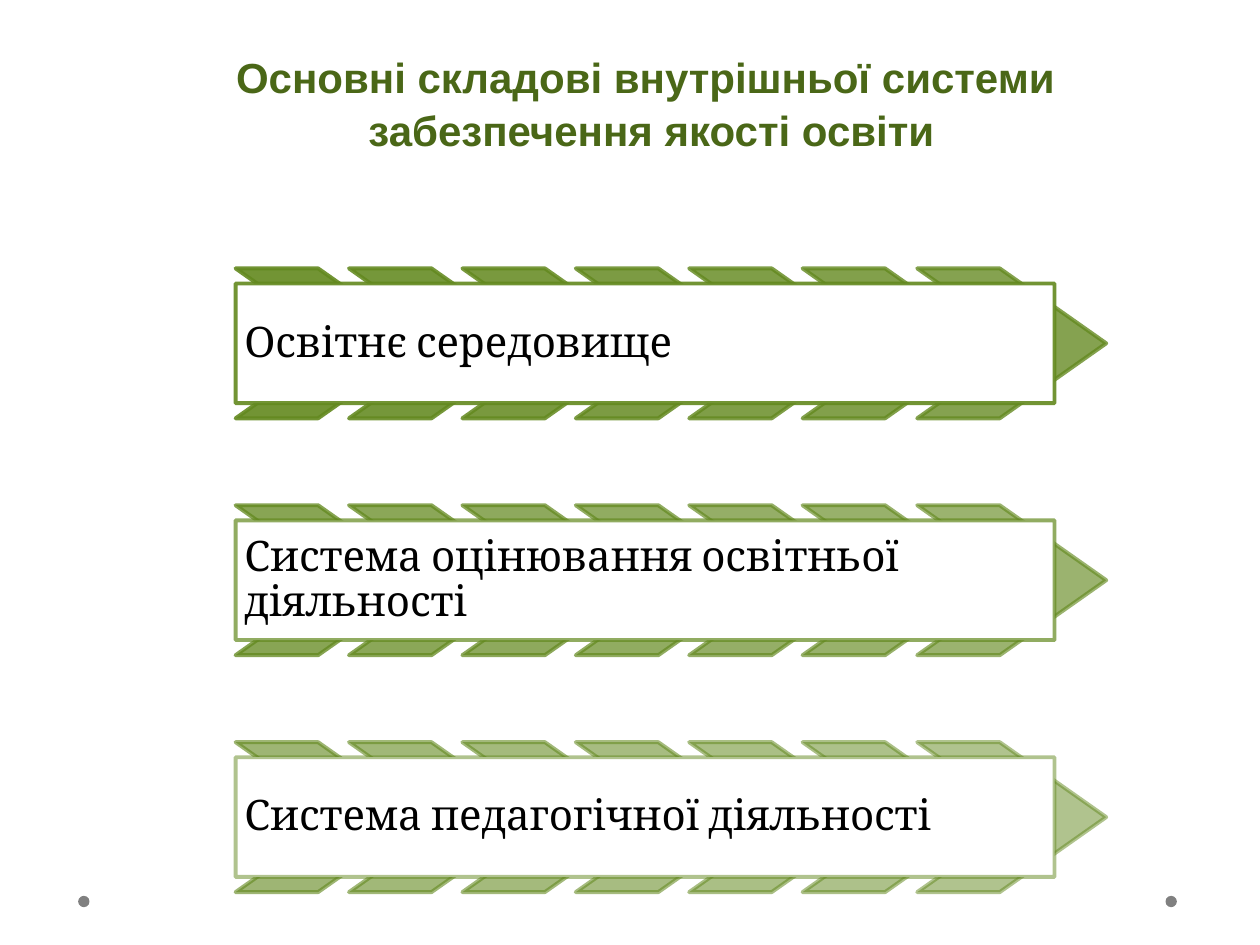
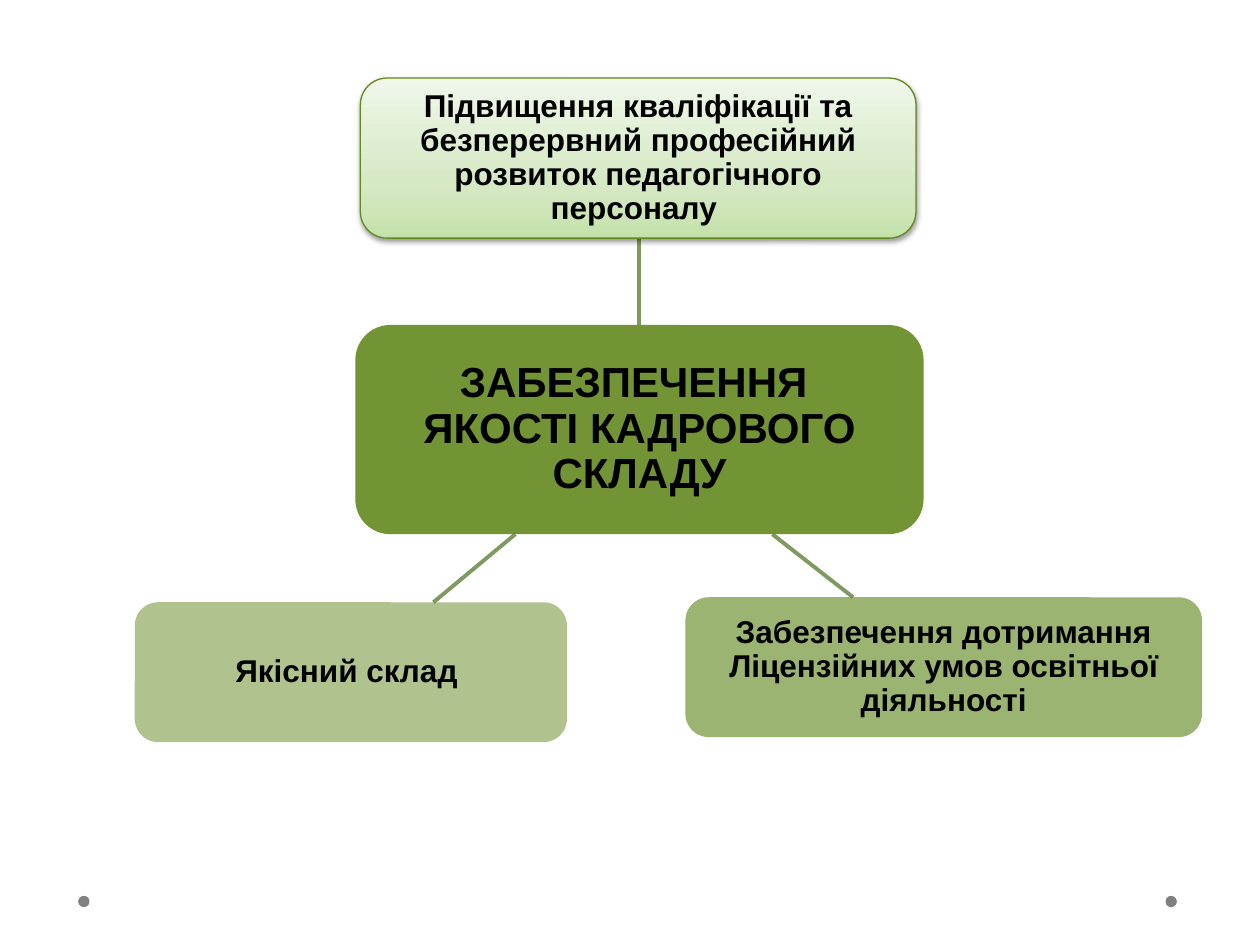
from dataclasses import dataclass
from lxml.etree import SubElement
from pptx import Presentation
from pptx.dml.color import RGBColor as RGB
from pptx.enum.shapes import MSO_CONNECTOR as Conn, MSO_SHAPE as Geo
from pptx.enum.text import MSO_ANCHOR as Anchor, MSO_AUTO_SIZE as AutoSize, PP_ALIGN as Align
from pptx.oxml.ns import qn
from pptx.util import Pt

SCALE = 9144


@dataclass(frozen=True)
class Theme:
    """Colours, fonts, type sizes and line widths of the deck."""

    green: str = "63891F"
    title: str = "4A6717"
    outline: str = "62891C"
    link: str = "7F9A61"
    dot: str = "808080"
    white: str = "FFFFFF"
    black: str = "000000"
    gradient: tuple = ((0, "C5E1AB"), (35, "D6E9C5"), (100, "EFF7E9"))
    sans: str = "Arial"
    serif: str = "Cambria"
    large: int = 24
    small: int = 18
    line: float = 2.25
    thin: float = 0.75


@dataclass(frozen=True)
class Box:
    """A rectangle in px."""

    x: int
    y: int
    w: int
    h: int

    def emu(self) -> tuple:
        """Return left, top, width and height in EMU."""
        return tuple(v * SCALE for v in (self.x, self.y, self.w, self.h))


@dataclass(frozen=True)
class Node:
    """A rounded box of the staff diagram; without alpha it has a gradient."""

    text: str
    box: Box
    size: int
    inset: int
    alpha: int | None = None


@dataclass(frozen=True)
class Link:
    """A straight line between two points."""

    x1: int
    y1: int
    x2: int
    y2: int


T = Theme()
TITLE = "Основні складові внутрішньої системи \nзабезпечення якості освіти"
COMPONENTS = (
    "Освітнє середовище",
    "Система оцінювання освітньої діяльності",
    "Система педагогічної діяльності",
)
NODES = (
    Node("ЗАБЕЗПЕЧЕННЯ \nЯКОСТІ КАДРОВОГО СКЛАДУ", Box(282, 258, 451, 166), T.large, 7, 90),
    Node("Підвищення кваліфікації та безперервний професійний розвиток педагогічного персоналу ",
         Box(286, 62, 441, 127), T.small, 5),
    Node("Забезпечення дотримання Ліцензійних умов освітньої діяльності",
         Box(544, 474, 410, 111), T.small, 5, 63),
    Node("Якісний склад ", Box(107, 478, 343, 111), T.small, 5, 50),
)
LINKS = (Link(507, 258, 507, 189), Link(613, 424, 677, 474), Link(409, 424, 344, 478))


def fade(xml, alpha: int) -> None:
    """Make every colour inside an element partly transparent."""
    for c in xml.iter(qn("a:srgbClr")):
        SubElement(c, qn("a:alpha"), val=str(alpha * 1000))


def add_shape(s, geo, box: Box, fill: str | None, line: str | None = None, width: float = T.line):
    """Add a shadowless preset shape."""
    sp = s.shapes.add_shape(geo, *box.emu())
    sp.shadow.inherit = False
    if fill:
        sp.fill.solid()
        sp.fill.fore_color.rgb = RGB.from_string(fill)
    if line:
        sp.line.color.rgb = RGB.from_string(line)
        sp.line.width = Pt(width)
    else:
        sp.line.fill.background()
    return sp


def style(p, font: str, size: int, color: str, bold: bool, align, spacing: float) -> None:
    """Format a whole paragraph."""
    p.alignment, p.line_spacing = align, spacing
    p.font.name, p.font.size, p.font.bold = font, Pt(size), bold
    p.font.color.rgb = RGB.from_string(color)


def add_text(sp, text: str, inset: int, font: str, size: int, bold: bool, align) -> None:
    """Write vertically centred black text into a shape."""
    tf = sp.text_frame
    tf.word_wrap, tf.vertical_anchor = True, Anchor.MIDDLE
    tf.margin_left = tf.margin_right = tf.margin_top = tf.margin_bottom = inset * SCALE
    p = tf.paragraphs[0]
    p.text = text
    style(p, font, size, T.black, bold, align, 0.9)


def add_title(s, text: str) -> None:
    """Place and format the slide title."""
    sp = s.shapes.title
    sp.left, sp.top, sp.width, sp.height = Box(51, 44, 932, 84).emu()
    tf = sp.text_frame
    tf.auto_size, tf.word_wrap, tf.vertical_anchor = AutoSize.NONE, True, Anchor.BOTTOM
    p = tf.paragraphs[0]
    p.text = text
    style(p, T.sans, T.large, T.title, True, Align.CENTER, 1.05)


def add_master_dots(prs, s) -> None:
    """Put the two footer dots on the slide master."""
    for x in (925, 62):
        sp = add_shape(s, Geo.OVAL, Box(x, 711, 9, 9), T.dot)
        prs.slide_master.element.cSld.spTree.append(sp.element)


def add_component(s, row: int, text: str) -> None:
    """Draw a band of seven fading chevrons with a caption over it."""
    count, left, top = 7, 187, 213 + 188 * row
    for i in range(count):
        x = left + 541 * i // (count - 1)
        sp = add_shape(s, Geo.CHEVRON, Box(x, top, 150, 119), T.green, T.green)
        sp.adjustments[0] = 0.71
        fade(sp.element.spPr, 90 - 2 * (count * row + i))
    sp = add_shape(s, Geo.RECTANGLE, Box(left, top + 12, 650, 95), T.white, T.green)
    fade(sp.element.spPr.find(qn("a:ln")), 90 - 20 * row)
    add_text(sp, text, 7, T.serif, T.large, False, Align.LEFT)


def add_gradient(sp) -> None:
    """Fill a shape with the light green gradient, darkest at the bottom."""
    sp.fill.gradient()
    sp.fill.gradient_angle = 90
    stops = next(sp.element.spPr.iter(qn("a:gsLst")))
    for gs in list(stops):
        stops.remove(gs)
    for pos, color in T.gradient:
        gs = SubElement(stops, qn("a:gs"), pos=str(pos * 1000))
        SubElement(gs, qn("a:srgbClr"), val=color)


def add_shadow(sp) -> None:
    """Give a shape a soft shadow below."""
    effects = sp.element.spPr.find(qn("a:effectLst"))
    shadow = SubElement(effects, qn("a:outerShdw"), blurRad=str(Pt(3.1)), dist=str(Pt(1.6)),
                        dir="5400000", rotWithShape="0")
    SubElement(shadow, qn("a:srgbClr"), val=T.black)
    fade(shadow, 38)


def add_node(s, node: Node) -> None:
    """Draw one rounded box of the staff diagram."""
    if node.alpha is None:
        sp = add_shape(s, Geo.ROUNDED_RECTANGLE, node.box, None, T.outline, T.thin)
        add_gradient(sp)
        add_shadow(sp)
    else:
        sp = add_shape(s, Geo.ROUNDED_RECTANGLE, node.box, T.green)
        fade(sp.element.spPr, node.alpha)
    add_text(sp, node.text, node.inset, T.sans, node.size, True, Align.CENTER)


def add_link(s, link: Link) -> None:
    """Draw one line of the staff diagram."""
    ends = (v * SCALE for v in (link.x1, link.y1, link.x2, link.y2))
    cn = s.shapes.add_connector(Conn.STRAIGHT, *ends)
    cn.line.color.rgb = RGB.from_string(T.link)
    cn.line.width = Pt(T.line)
    SubElement(cn.element.spPr, qn("a:effectLst"))


def main() -> None:
    """Build and save the deck."""
    prs = Presentation()
    prs.slide_width, prs.slide_height = 1000 * SCALE, 750 * SCALE
    title_only, blank = prs.slide_layouts[5], prs.slide_layouts[6]

    s = prs.slides.add_slide(title_only)
    add_master_dots(prs, s)
    add_title(s, TITLE)
    for row, text in enumerate(COMPONENTS):
        add_component(s, row, text)

    s = prs.slides.add_slide(blank)
    for link in LINKS:
        add_link(s, link)
    for node in NODES:
        add_node(s, node)

    prs.save("out.pptx")


if __name__ == "__main__":
    main()
